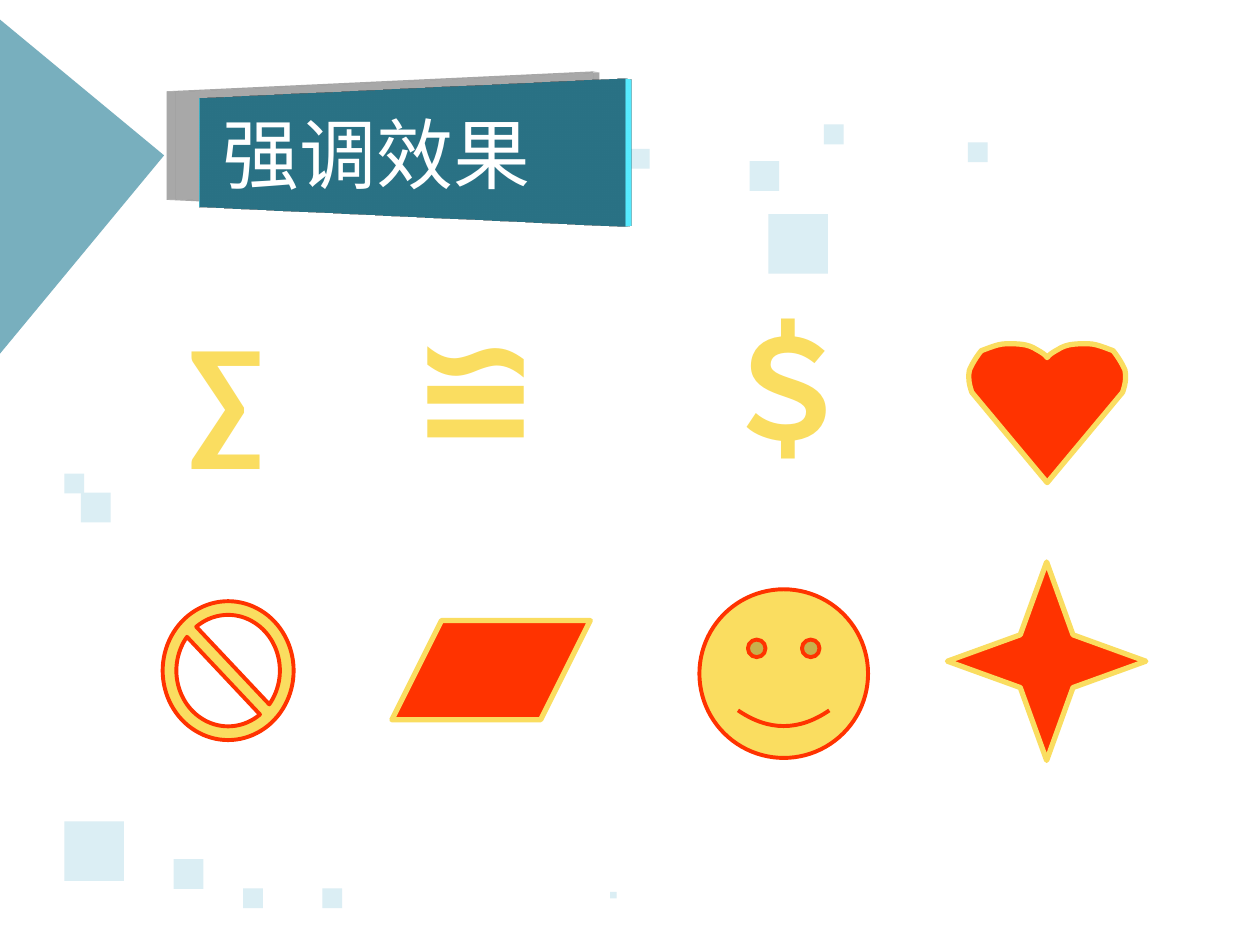
import dataclasses

import lxml.etree
import pptx
import pptx.dml.color
import pptx.enum.shapes
import pptx.enum.text
import pptx.oxml
import pptx.oxml.ns
import pptx.util

Cm = pptx.util.Cm
Pt = pptx.util.Pt
RGB = pptx.dml.color.RGBColor.from_string
Preset = pptx.enum.shapes.MSO_SHAPE
Align = pptx.enum.text.PP_ALIGN
qn = pptx.oxml.ns.qn


@dataclasses.dataclass(frozen=True)
class Theme:
    teal: str = "31859C"
    pale: str = "DBEEF4"
    red: str = "FF3300"
    yellow: str = "FADD60"
    white: str = "FFFFFF"
    latin: str = "Calibri"
    cjk: str = "Noto Sans CJK SC"
    title: int = 44
    glyph: int = 80
    large_glyph: int = 88
    thin: float = 2.25
    thick: float = 3


THEME = Theme()

BANNER_DEPTH = """
<a:root xmlns:a="http://schemas.openxmlformats.org/drawingml/2006/main">
  <a:effectLst>
    <a:outerShdw blurRad="184150" dist="241300" dir="11520000" sx="110000" sy="110000" algn="ctr">
      <a:srgbClr val="000000"><a:alpha val="18000"/></a:srgbClr>
    </a:outerShdw>
  </a:effectLst>
  <a:scene3d>
    <a:camera prst="perspectiveFront" fov="5100000"><a:rot lat="0" lon="2100000" rev="0"/></a:camera>
    <a:lightRig rig="flood" dir="t"><a:rot lat="0" lon="0" rev="13800000"/></a:lightRig>
  </a:scene3d>
  <a:sp3d extrusionH="107950" prstMaterial="plastic">
    <a:bevelT w="82550" h="63500" prst="divot"/><a:bevelB/>
  </a:sp3d>
</a:root>
"""

HEART_CURVES = [
    [(0.03, 0.07), (0.13, 0.045), (0.17, 0.03)],
    [(0.27, 0), (0.38, 0), (0.51, 0)],
    [(0.62, 0), (0.73, 0.03), (0.83, 0.05)],
    [(0.9, 0.1), (0.95, 0.15), (0.98, 0.19)],
    [(1, 0.25), (0.98, 0.3), (0.95, 0.35)],
]


def paint(shape, fill, line=None, weight=0):
    shape.shadow.inherit = False
    shape.fill.solid()
    shape.fill.fore_color.rgb = RGB(fill)
    if line:
        shape.line.color.rgb = RGB(line)
        shape.line.width = Pt(weight)
    else:
        shape.line.fill.background()
    return shape


def add_preset(slide, preset, box, fill, line=None, weight=0, adjustment=None):
    shape = slide.shapes.add_shape(preset, *map(Cm, box))
    if adjustment is not None:
        shape.adjustments[0] = adjustment
    return paint(shape, fill, line, weight)


def write(frame, text, size, color, font, alignment):
    paragraph = frame.paragraphs[0]
    paragraph.text = text
    paragraph.alignment = alignment
    paragraph.font.size = Pt(size)
    paragraph.font.name = font
    paragraph.font.color.rgb = RGB(color)
    run_properties = paragraph.runs[0]._r.get_or_add_rPr()
    lxml.etree.SubElement(run_properties, qn("a:ea")).set("typeface", font)
    return paragraph


def corner_diamond(slide, box):
    diamond = add_preset(slide, Preset.RECTANGLE, box, THEME.teal)
    diamond.rotation = 39.6
    color = diamond._element.spPr.find(qn("a:solidFill"))[0]
    lxml.etree.SubElement(color, qn("a:alpha")).set("val", "65000")


def confetti(slide, origin, squares):
    left, top = origin
    for x, y, side in squares:
        add_preset(slide, Preset.RECTANGLE, (left + x, top + y, side, side), THEME.pale)


def title_banner(slide, box, title):
    banner = add_preset(slide, Preset.RECTANGLE, box, THEME.teal)
    properties = banner._element.spPr
    properties.remove(properties.find(qn("a:effectLst")))
    properties.extend(list(pptx.oxml.parse_xml(BANNER_DEPTH)))
    banner.text_frame.vertical_anchor = pptx.enum.text.MSO_ANCHOR.MIDDLE
    write(banner.text_frame, title, THEME.title, THEME.white, THEME.cjk, Align.CENTER)


def glyph(slide, box, character, size):
    frame = slide.shapes.add_textbox(*map(Cm, box)).text_frame
    frame.word_wrap = False
    frame.auto_size = pptx.enum.text.MSO_AUTO_SIZE.SHAPE_TO_FIT_TEXT
    write(frame, character, size, THEME.yellow, THEME.latin, Align.JUSTIFY).font.bold = True


def bezier(points, t):
    weights = ((1 - t) ** 3, 3 * t * (1 - t) ** 2, 3 * t * t * (1 - t), t ** 3)
    return tuple(sum(w * p[axis] for w, p in zip(weights, points)) for axis in (0, 1))


def heart(slide, box, steps=6):
    left, top, width, height = box
    notch = (0, 0.1)
    half = [notch]
    for curve in HEART_CURVES:
        points = [half[-1], *curve]
        half += [bezier(points, step / steps) for step in range(1, steps + 1)]
    mirrored = [(-u, v) for u, v in reversed(half[1:])]
    outline = [
        (Cm(left + width * (1 + u) / 2), Cm(top + height * v))
        for u, v in [*half, (0, 1), *mirrored]
    ]
    builder = slide.shapes.build_freeform(*outline[0])
    builder.add_line_segments(outline[1:], close=True)
    paint(builder.convert_to_shape(), THEME.red, THEME.yellow, THEME.thick)


def symbol_gallery(slide, origin):
    left, top = origin

    def place(x, y, width, height):
        return left + x, top + y, width, height

    red_icon = (THEME.red, THEME.yellow, THEME.thick)
    yellow_icon = (THEME.yellow, THEME.red, THEME.thin)
    glyph(slide, place(0.25, 0.36, 2.08, 3.68), "∑", THEME.glyph)
    glyph(slide, place(4.77, 0, 3.66, 4.01), "≌", THEME.large_glyph)
    glyph(slide, place(10.94, 0.25, 3.38, 3.68), "＄", THEME.glyph)
    heart(slide, place(16.23, 1.22, 3.2, 2.8))
    add_preset(slide, Preset.STAR_4_POINT, place(15.82, 5.62, 4, 4), *red_icon, 0.188)
    add_preset(slide, Preset.NO_SYMBOL, place(0, 6.41, 2.64, 2.8), *yellow_icon, 0.105)
    add_preset(slide, Preset.PARALLELOGRAM, place(4.62, 6.8, 4, 2), *red_icon, 0.5)
    add_preset(slide, Preset.SMILEY_FACE, place(10.82, 6.17, 3.4, 3.4), *yellow_icon, 0.047)


def main():
    deck = pptx.Presentation()
    deck.slide_width, deck.slide_height = Cm(25.4), Cm(19.05)
    slide = deck.slides.add_slide(deck.slide_layouts[6])
    corner_diamond(slide, (-4.06, 0.48, 6.12, 6.12))
    confetti(slide, (1.3, 16.56), [
        (0, 0, 1.2), (2.2, 0.76, 0.6), (3.6, 1.35, 0.4), (5.2, 1.35, 0.4), (11, 1.42, 0.13),
    ])
    confetti(slide, (1.3, 9.55), [(0, 0, 0.4), (0.33, 0.38, 0.6)])
    confetti(slide, (12.7, 2.51), [
        (0, 0.49, 0.4), (2.41, 0.74, 0.6), (2.79, 1.81, 1.2), (3.91, 0, 0.4), (6.81, 0.36, 0.4),
    ])
    title_banner(slide, (2.49, 1.83, 10.21, 2.49), "强调效果")
    symbol_gallery(slide, (3.28, 5.71))
    deck.save("out.pptx")


if __name__ == "__main__":
    main()
